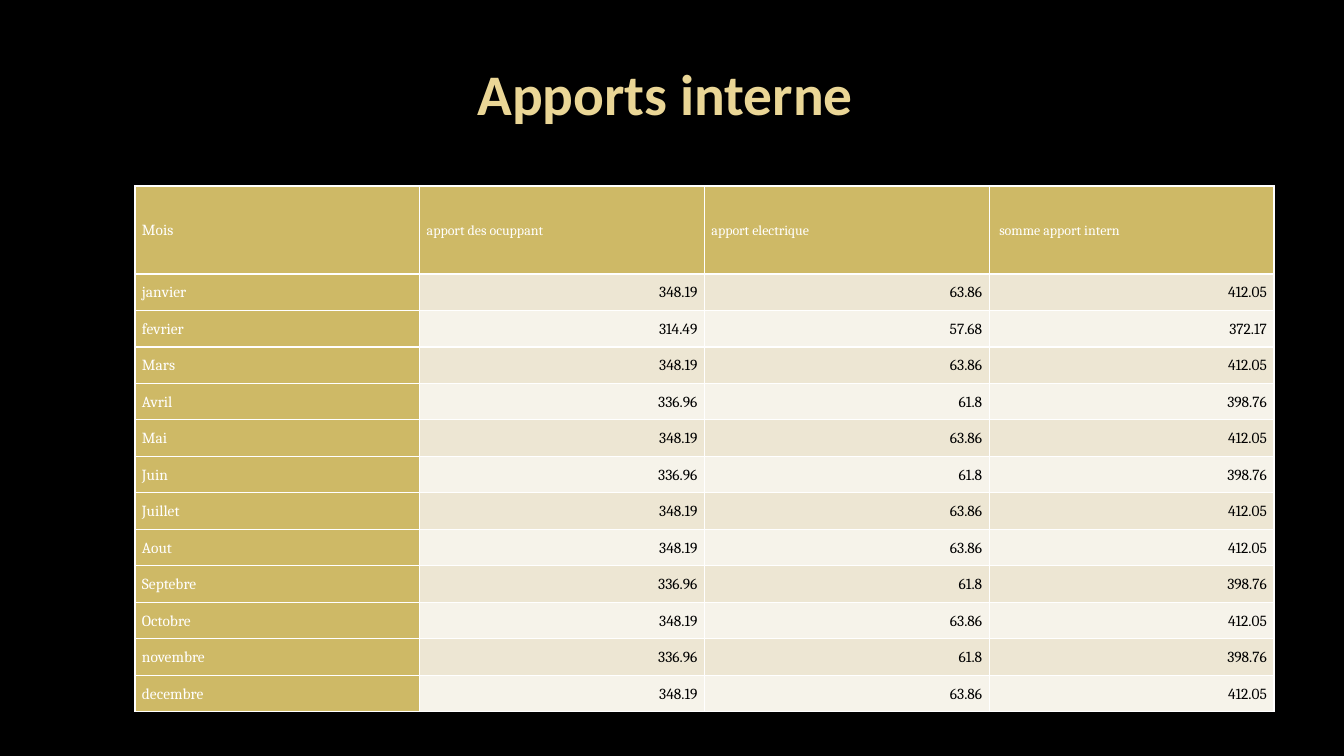
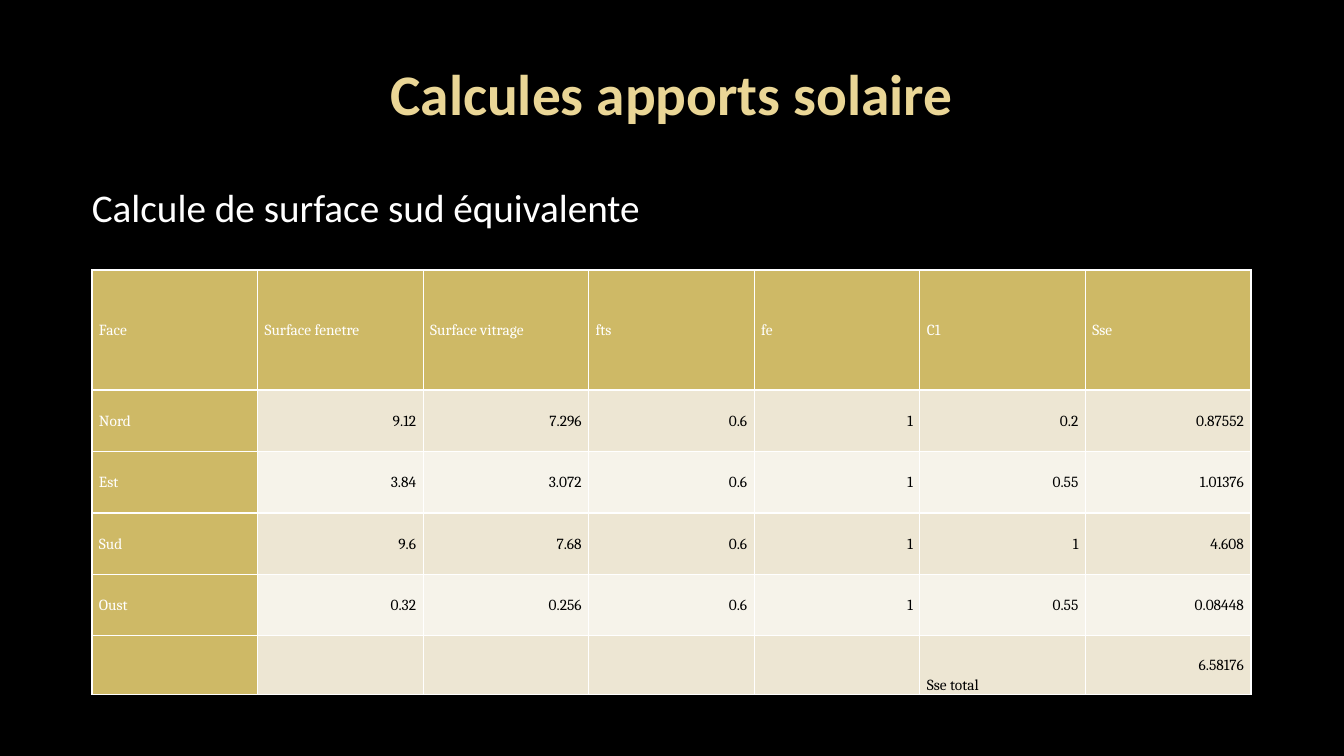
from pptx import Presentation
from pptx import util as u
from pptx.dml.color import RGBColor
from pptx.enum import text
from pptx.oxml import parse_xml
from pptx.oxml.ns import nsdecls

BLACK = RGBColor(0x00, 0x00, 0x00)
WHITE = RGBColor(0xFF, 0xFF, 0xFF)
PALE_GOLD = RGBColor(0xEA, 0xD6, 0x96)
GOLD = RGBColor(0xCE, 0xB9, 0x66)
BANDS = (RGBColor(0xED, 0xE6, 0xD3), RGBColor(0xF6, 0xF3, 0xEA))
TITLE_FONT, TABLE_FONT = "Calibri", "Cambria"
LEFT, CENTER, RIGHT = text.PP_ALIGN.LEFT, text.PP_ALIGN.CENTER, text.PP_ALIGN.RIGHT
MIDDLE, BOTTOM = text.MSO_ANCHOR.MIDDLE, text.MSO_ANCHOR.BOTTOM

# Content: the first row of each table is its header
GAINS_TITLE = "Apports interne "
GAINS = [
    ("Mois", "apport des ocuppant", "apport electrique", " somme apport intern"),
    ("janvier", "348.19", "63.86", "412.05"),
    ("fevrier", "314.49", "57.68", "372.17"),
    ("Mars", "348.19", "63.86", "412.05"),
    ("Avril", "336.96", "61.8", "398.76"),
    ("Mai", "348.19", "63.86", "412.05"),
    ("Juin", "336.96", "61.8", "398.76"),
    ("Juillet", "348.19", "63.86", "412.05"),
    ("Aout", "348.19", "63.86", "412.05"),
    ("Septebre", "336.96", "61.8", "398.76"),
    ("Octobre", "348.19", "63.86", "412.05"),
    ("novembre", "336.96", "61.8", "398.76"),
    ("decembre", "348.19", "63.86", "412.05"),
]
SOLAR_TITLE = "Calcules apports solaire"
SOLAR_SUBTITLE = "Calcule de surface sud équivalente"
SOLAR = [
    ("Face", "Surface fenetre", "Surface vitrage", "fts", "fe", "C1", "Sse"),
    ("Nord", "9.12", "7.296", "0.6", "1", "0.2", "0.87552"),
    ("Est", "3.84", "3.072", "0.6", "1", "0.55", "1.01376"),
    ("Sud", "9.6", "7.68", "0.6", "1", "1", "4.608"),
    ("Oust", "0.32", "0.256", "0.6", "1", "0.55", "0.08448"),
    ("", "", "", "", "", "Sse total", "6.58176"),
]


def px(length):
    return u.Emu(round(length * 914400 / 100.8))


def write(frame, content, font, size, color, align=LEFT, bold=False):
    paragraph = frame.paragraphs[0]
    paragraph.alignment = align
    run = paragraph.add_run()
    run.text = content
    run.font.name, run.font.size, run.font.bold = font, u.Pt(size), bold
    run.font.color.rgb = color
    return paragraph


def add_titled_slide(presentation, title):
    slide = presentation.slides.add_slide(presentation.slide_layouts[5])
    shape = slide.shapes.title
    shape.left, shape.top, shape.width, shape.height = map(px, (67, 30, 1210, 126))
    shape.text_frame.vertical_anchor = MIDDLE
    write(shape.text_frame, title, TITLE_FONT, 41, PALE_GOLD, CENTER, True)
    return slide


def border_cell(cell):
    # Borders come before the fill in the cell properties
    properties = cell._tc.get_or_add_tcPr()
    for index, side in enumerate(("lnL", "lnR", "lnT", "lnB")):
        properties.insert(index, parse_xml(
            f'<a:{side} {nsdecls("a")} w="12700"><a:solidFill>'
            f'<a:srgbClr val="{WHITE}"/></a:solidFill></a:{side}>'))


def add_data_table(slide, rows, box, header_height, header_size=11, total_height=0):
    left, top, width, height = box
    table = slide.shapes.add_table(len(rows), len(rows[0]), *map(px, box)).table
    for column in table.columns:
        column.width = px(width / len(rows[0]))

    # Header, equal body rows, and a total row if there is one
    body_count = len(rows) - 1 - bool(total_height)
    body_height = (height - header_height - total_height) / body_count
    heights = [header_height] + [body_height] * body_count
    if total_height:
        heights.append(total_height)

    for r, (values, row_height) in enumerate(zip(rows, heights)):
        table.rows[r].height = px(row_height)
        for c, value in enumerate(values):
            cell = table.cell(r, c)
            heading = r == 0 or c == 0
            label = value == "Sse total"
            cell.margin_left = cell.margin_right = px(7)
            cell.margin_top = cell.margin_bottom = 0
            cell.vertical_anchor = BOTTOM if label else MIDDLE
            cell.fill.solid()
            cell.fill.fore_color.rgb = GOLD if heading else BANDS[(r - 1) % 2]
            border_cell(cell)
            if value:
                size = header_size if r == 0 and c else 11
                paragraph = write(cell.text_frame, value, TABLE_FONT, size,
                                  WHITE if heading else BLACK,
                                  LEFT if heading or label else RIGHT)
                paragraph.line_spacing = 1.07


def main():
    presentation = Presentation()
    presentation.slide_width, presentation.slide_height = px(1344), px(756)
    background = presentation.slide_master.background.fill
    background.solid()
    background.fore_color.rgb = BLACK

    # Internal gains
    slide = add_titled_slide(presentation, GAINS_TITLE)
    add_data_table(slide, GAINS, (135, 186, 1139, 526), 88, header_size=10)

    # Solar gains
    slide = add_titled_slide(presentation, SOLAR_TITLE)
    frame = slide.shapes.add_textbox(*map(px, (82, 178, 1180, 60))).text_frame
    frame.word_wrap = True
    write(frame, SOLAR_SUBTITLE, TITLE_FONT, 28, WHITE)
    add_data_table(slide, SOLAR, (92, 270, 1159, 425), 120, total_height=59)

    presentation.save("out.pptx")


if __name__ == "__main__":
    main()
